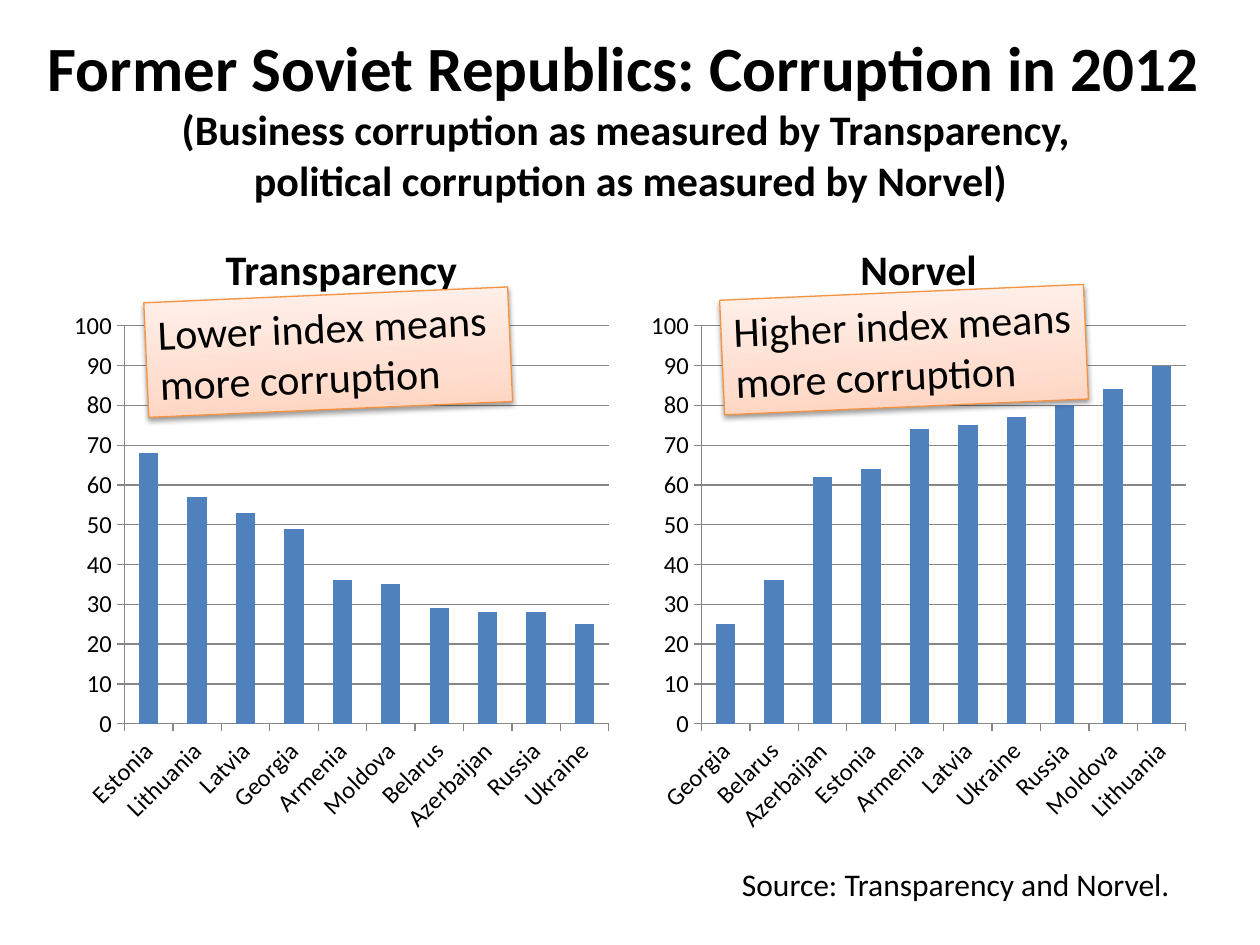
from dataclasses import dataclass

from lxml import etree
from pptx import Presentation
from pptx.chart.data import CategoryChartData
from pptx.dml.color import RGBColor
from pptx.enum.chart import XL_CHART_TYPE, XL_TICK_MARK
from pptx.enum.shapes import MSO_SHAPE
from pptx.enum.text import MSO_ANCHOR, PP_ALIGN
from pptx.util import Emu, Pt

COLUMN = XL_CHART_TYPE.COLUMN_CLUSTERED
TICK_OUT, TICK_NONE = XL_TICK_MARK.OUTSIDE, XL_TICK_MARK.NONE
RECT = MSO_SHAPE.RECTANGLE
MIDDLE, BOTTOM, TOP = MSO_ANCHOR.MIDDLE, MSO_ANCHOR.BOTTOM, MSO_ANCHOR.TOP
LEFT, CENTER = PP_ALIGN.LEFT, PP_ALIGN.CENTER

PX = 9144  # EMU per px, 100 px to the inch
FONT = "Calibri"
COLORS = {
    "text": "000000",
    "bar": "4F81BD",
    "axis": "878787",
    "note_line": "F69240",
    "note_dark": "FFD2BD",
    "note_mid": "FFDED0",
    "note_light": "FFF2ED",
}
A_NS = "http://schemas.openxmlformats.org/drawingml/2006/main"
NOTE_GRADIENT = ((0, "note_dark"), (35, "note_mid"), (100, "note_light"))


@dataclass
class Box:
    x: int
    y: int
    w: int
    h: int

    def emu(self) -> tuple:
        return tuple(Emu(v * PX) for v in (self.x, self.y, self.w, self.h))


@dataclass
class Line:
    text: str
    size: int
    bold: bool = False


@dataclass
class Panel:
    heading: str
    x: int
    note: str
    note_x: int
    note_y: int
    values: dict


PANELS = [
    Panel("Transparency", 50, "Lower index means more corruption", 116, 234,
          {"Estonia": 68, "Lithuania": 57, "Latvia": 53, "Georgia": 49,
           "Armenia": 36, "Moldova": 35, "Belarus": 29, "Azerbaijan": 28,
           "Russia": 28, "Ukraine": 25}),
    Panel("Norvel", 508, "Higher index means more corruption", 573, 232,
          {"Georgia": 25, "Belarus": 36, "Azerbaijan": 62, "Estonia": 64,
           "Armenia": 74, "Latvia": 75, "Ukraine": 77, "Russia": 80,
           "Moldova": 84, "Lithuania": 90}),
]


def rgb(name: str) -> RGBColor:
    return RGBColor.from_string(COLORS[name])


def write(tf, lines: list, align=LEFT, anchor=TOP, wrap: bool = True) -> None:
    """Fill a text frame with one paragraph, its lines split by breaks."""
    tf.word_wrap = wrap
    tf.vertical_anchor = anchor
    p = tf.paragraphs[0]
    p.alignment = align
    for i, line in enumerate(lines):
        if i:
            p.add_line_break()
        r = p.add_run()
        r.text = line.text
        r.font.name = FONT
        r.font.size = Pt(line.size)
        r.font.bold = line.bold
        r.font.color.rgb = rgb("text")


def add_text(slide, box: Box, lines: list, **layout) -> None:
    write(slide.shapes.add_textbox(*box.emu()).text_frame, lines, **layout)


def style_axis(axis) -> None:
    axis.major_tick_mark = TICK_OUT
    axis.minor_tick_mark = TICK_NONE
    axis.tick_labels.font.size = Pt(14)
    axis.format.line.color.rgb = rgb("axis")
    axis.format.line.width = Pt(0.75)


def add_column_chart(slide, box: Box, values: dict) -> None:
    data = CategoryChartData()
    data.categories = list(values)
    data.add_series("Series 1", list(values.values()))
    chart = slide.shapes.add_chart(COLUMN, *box.emu(), data).chart
    chart.has_legend = False
    chart.has_title = False
    chart.font.name = FONT
    chart.font.size = Pt(10)
    chart.font.color.rgb = rgb("text")

    plot = chart.plots[0]
    plot.vary_by_categories = False
    plot.gap_width = 150
    fill = plot.series[0].format.fill
    fill.solid()
    fill.fore_color.rgb = rgb("bar")

    cat, val = chart.category_axis, chart.value_axis
    style_axis(cat)
    style_axis(val)
    val.minimum_scale, val.maximum_scale, val.major_unit = 0, 100, 10
    val.has_major_gridlines = True
    val.major_gridlines.format.line.color.rgb = rgb("axis")
    val.major_gridlines.format.line.width = Pt(0.75)
    val.tick_labels.number_format = "#,##0"
    val.tick_labels.number_format_is_linked = False


def add_note(slide, box: Box, text: str) -> None:
    """Tilted note with a three-stop gradient and a soft shadow."""
    sp = slide.shapes.add_shape(RECT, *box.emu())
    sp.rotation = 357.5
    sp.line.color.rgb = rgb("note_line")
    sp.line.width = Pt(0.75)
    write(sp.text_frame, [Line(text, 24)])

    stops = "".join(
        f'<a:gs pos="{pos * 1000}"><a:srgbClr val="{COLORS[name]}"/></a:gs>'
        for pos, name in NOTE_GRADIENT)
    gradient = etree.fromstring(
        f'<a:gradFill xmlns:a="{A_NS}" rotWithShape="1"><a:gsLst>{stops}'
        '</a:gsLst><a:lin ang="16200000" scaled="1"/></a:gradFill>')
    effects = etree.fromstring(
        f'<a:effectLst xmlns:a="{A_NS}"><a:outerShdw blurRad="{Pt(3.1)}" '
        f'dist="{Pt(1.6)}" dir="5400000" rotWithShape="0">'
        f'<a:srgbClr val="{COLORS["text"]}"><a:alpha val="38000"/></a:srgbClr>'
        '</a:outerShdw></a:effectLst>')
    line = sp.line._get_or_add_ln()
    line.addprevious(gradient)
    line.addnext(effects)


def main() -> None:
    prs = Presentation()
    prs.slide_width, prs.slide_height = Emu(1000 * PX), Emu(750 * PX)
    slide = prs.slides.add_slide(prs.slide_layouts[6])

    # Title
    add_text(slide, Box(20, 30, 961, 125), [
        Line("Former Soviet Republics: Corruption in 2012 ", 36, True),
        Line("(Business corruption as measured by Transparency, ", 24, True),
        Line("political corruption as measured by Norvel)", 24, True),
    ], align=CENTER, anchor=MIDDLE)

    # Headings and charts
    for panel in PANELS:
        add_text(slide, Box(panel.x, 168, 442, 70),
                 [Line(panel.heading, 24, True)], align=CENTER, anchor=BOTTOM)
        add_column_chart(slide, Box(panel.x, 238, 442, 432), panel.values)

    # Source
    add_text(slide, Box(579, 682, 362, 40),
             [Line("Source: Transparency and Norvel.", 18)], wrap=False)

    # Notes over the charts
    for panel in PANELS:
        add_note(slide, Box(panel.note_x, panel.note_y, 289, 91), panel.note)

    prs.save("out.pptx")


if __name__ == "__main__":
    main()
